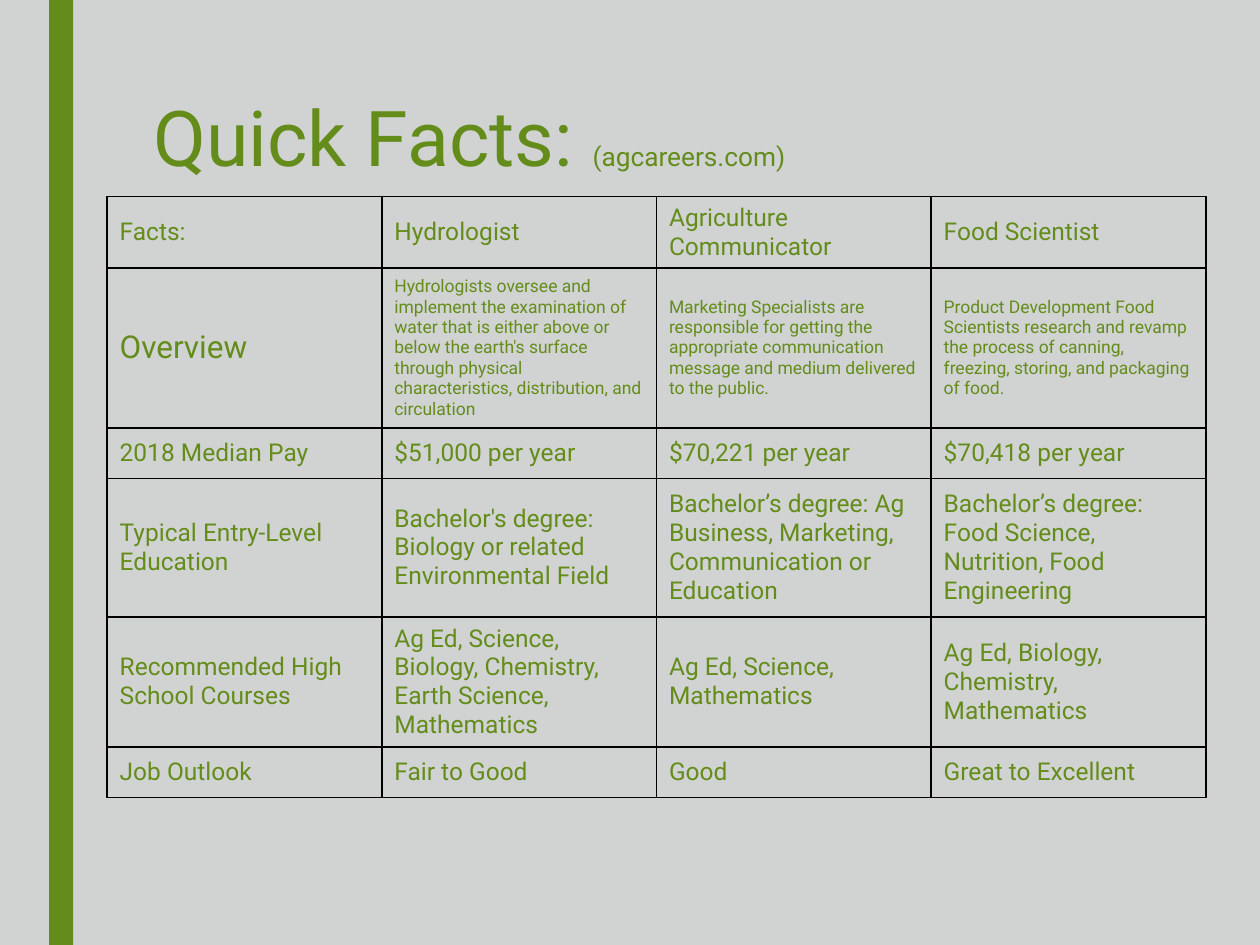
from lxml import etree
from pptx import Presentation
from pptx.dml.color import RGBColor
from pptx.enum import shapes, text
from pptx.oxml import ns
from pptx.util import Inches, Pt

GREEN = RGBColor(0x64, 0x8C, 0x1A)
GREY = RGBColor(0xD1, 0xD3, 0xD3)
BLACK = RGBColor(0, 0, 0)
FONT = "Roboto"

COLUMN_WIDTH = 2.18
ROW_HEIGHTS = [0.49, 1, 0.4, 1.1, 0.9, 0.4]
BODY_SIZE = 14
OVERVIEW_ROW = 1
OVERVIEW_SIZES = [18, 10, 10, 10]
FACTS = [
    ["Facts:", "Hydrologist", "Agriculture Communicator", "Food Scientist"],
    ["Overview",
     "Hydrologists oversee and implement the examination of water that is "
     "either above or below the earth's surface through physical "
     "characteristics, distribution, and circulation",
     "Marketing Specialists are responsible for getting the appropriate "
     "communication message and medium delivered to the public.",
     "Product Development Food Scientists research and revamp the process of "
     "canning, freezing, storing, and packaging of food."],
    ["2018 Median Pay", "$51,000 per year", "$70,221 per year",
     "$70,418 per year"],
    ["Typical Entry-Level Education",
     "Bachelor's degree:\nBiology or related Environmental Field",
     "Bachelor’s degree: Ag Business, Marketing, Communication or Education",
     "Bachelor’s degree: Food Science, Nutrition, Food Engineering"],
    ["Recommended High School Courses",
     "Ag Ed, Science, Biology, Chemistry, Earth Science, Mathematics",
     "Ag Ed, Science, Mathematics",
     "Ag Ed, Biology, Chemistry, Mathematics"],
    ["Job Outlook", "Fair to Good", "Good", "Great to Excellent"],
]


def style_font(font, size):
    font.name = FONT
    font.size = Pt(size)
    font.color.rgb = GREEN


def add_side_bar(page):
    bar = page.shapes.add_shape(shapes.MSO_SHAPE.RECTANGLE, Inches(0.39), 0,
                                Inches(0.19), Inches(7.5))
    bar.shadow.inherit = False
    bar.fill.solid()
    bar.fill.fore_color.rgb = GREEN
    bar.line.fill.background()


def add_title(page):
    box = page.shapes.add_textbox(Inches(1.12), Inches(0.75),
                                  Inches(7.88), Inches(1.62))
    box.text_frame.word_wrap = True
    para = box.text_frame.paragraphs[0]
    para.alignment = text.PP_ALIGN.JUSTIFY
    para.line_spacing = 0.89
    for words, size in [("Quick Facts: ", 44), ("(agcareers.com)", 15)]:
        span = para.add_run()
        span.text = words
        style_font(span.font, size)


def add_borders(cell):
    """Draw a thin black line on all four sides of a cell."""
    properties = cell._tc.get_or_add_tcPr()
    for side in "LRTB":
        line = etree.SubElement(properties, ns.qn(f"a:ln{side}"),
                                w=str(Pt(1)))
        fill = etree.SubElement(line, ns.qn("a:solidFill"))
        etree.SubElement(fill, ns.qn("a:srgbClr"), val=str(BLACK))


def fill_cell(cell, words, size):
    cell.text = words
    cell.vertical_anchor = text.MSO_ANCHOR.MIDDLE
    for para in cell.text_frame.paragraphs:
        style_font(para.font, size)
    add_borders(cell)
    cell.fill.background()


def add_facts_table(page):
    columns = len(FACTS[0])
    table = page.shapes.add_table(
        len(FACTS), columns, Inches(0.85), Inches(1.56),
        Inches(COLUMN_WIDTH * columns), Inches(sum(ROW_HEIGHTS))).table
    table.first_row = False
    table.horz_banding = False
    for column in table.columns:
        column.width = Inches(COLUMN_WIDTH)
    for r, (height, facts) in enumerate(zip(ROW_HEIGHTS, FACTS)):
        table.rows[r].height = Inches(height)
        sizes = OVERVIEW_SIZES if r == OVERVIEW_ROW else [BODY_SIZE] * columns
        for c, (words, size) in enumerate(zip(facts, sizes)):
            fill_cell(table.cell(r, c), words, size)


def main():
    deck = Presentation()
    deck.slide_width = Inches(10)
    deck.slide_height = Inches(7.5)
    page = deck.slides.add_slide(deck.slide_layouts[6])
    page.background.fill.solid()
    page.background.fill.fore_color.rgb = GREY
    add_side_bar(page)
    add_title(page)
    add_facts_table(page)
    deck.save("out.pptx")


if __name__ == "__main__":
    main()
